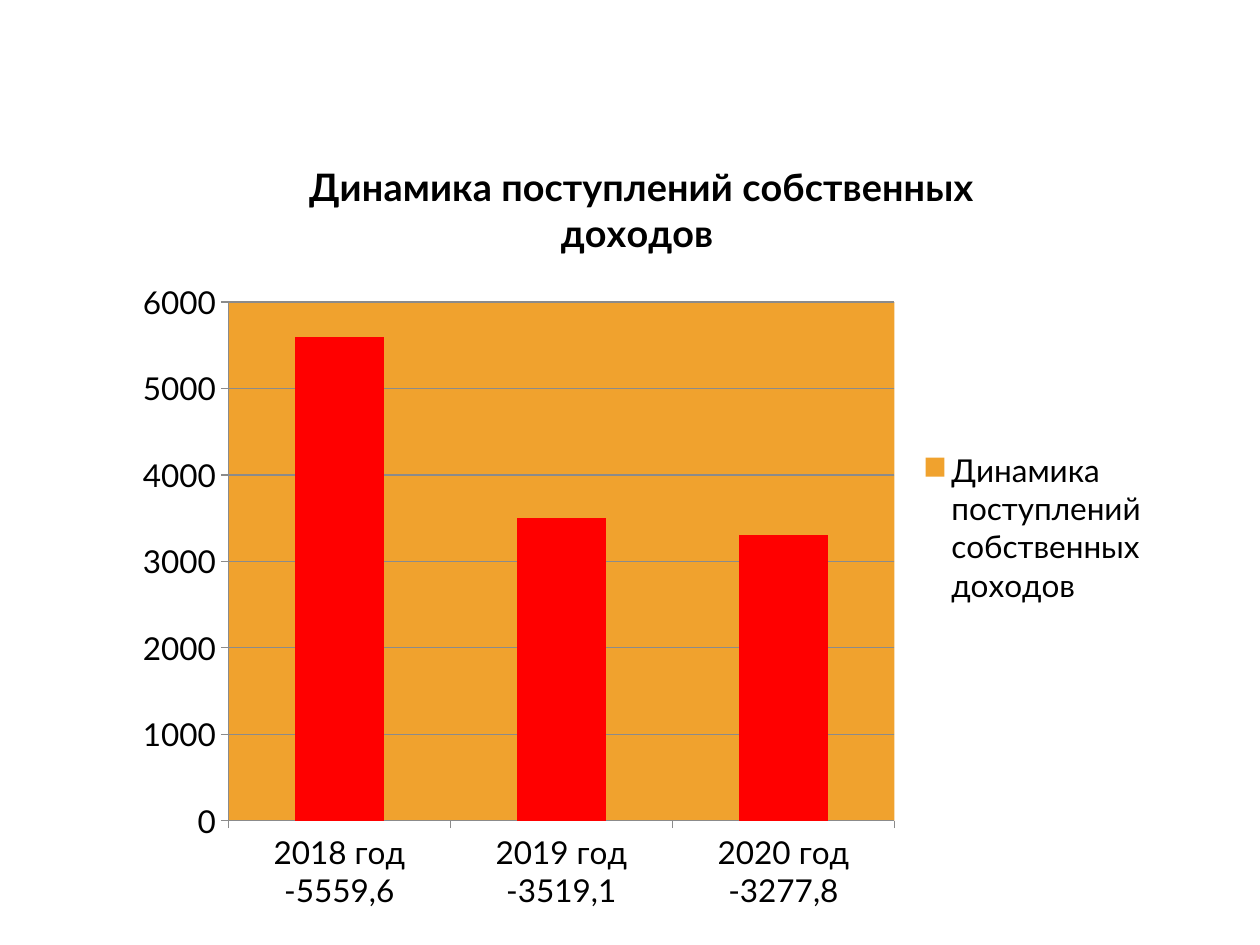
from pptx import Presentation
from pptx.chart.data import CategoryChartData as ChartData
from pptx.dml.color import RGBColor as Rgb
from pptx.enum.chart import XL_CHART_TYPE as Kind, XL_LEGEND_POSITION as Side
from pptx.enum.chart import XL_TICK_MARK as Tick
from pptx.oxml import parse_xml
from pptx.oxml.ns import nsdecls
from pptx.util import Cm, Pt

COLORS = {"text": "000000", "plot": "F0A22E", "bar": "FF0000", "line": "8B8B8B"}
FONT = "Lato"
TITLE = "Динамика поступлений собственных доходов "
INCOME = {
    "2018 год -5559,6": 5600,
    "2019 год -3519,1": 3500,
    "2020 год -3277,8": 3300,
}


def color(name):
    return Rgb.from_string(COLORS[name])


def set_font(font, size, bold=False):
    font.name, font.size, font.bold = FONT, Pt(size), bold
    font.color.rgb = color("text")


def set_fill(part, name):
    part.format.fill.solid()
    part.format.fill.fore_color.rgb = color(name)


def set_line(part):
    part.format.line.width = Pt(0.75)
    part.format.line.color.rgb = color("line")


def add_chart(slide):
    data = ChartData()
    data.categories = list(INCOME)
    data.add_series(TITLE, list(INCOME.values()))
    frame = slide.shapes.add_chart(
        Kind.COLUMN_STACKED, Cm(2.46), Cm(2.62), Cm(20.96), Cm(16.03), data)
    chart = frame.chart
    set_font(chart.font, 18)
    return chart


def style_title(chart):
    chart.has_title = True
    para = chart.chart_title.text_frame.paragraphs[0]
    run = para.add_run()
    run.text = TITLE
    set_font(run.font, 21.6, True)
    chart.chart_title.include_in_layout = False


def style_legend(chart):
    chart.has_legend = True
    chart.legend.position = Side.RIGHT
    chart.legend.include_in_layout = False


def style_axes(chart):
    value = chart.value_axis
    for axis in (chart.category_axis, value):
        axis.major_tick_mark = Tick.OUTSIDE
        axis.minor_tick_mark = Tick.NONE
        set_line(axis)
    value.minimum_scale, value.maximum_scale = 0, 6000
    value.major_unit = 1000
    value.has_major_gridlines = True
    set_line(value.major_gridlines)


def style_bars(chart):
    plot = chart.plots[0]
    plot.gap_width, plot.overlap = 150, 100
    plot.vary_by_categories = False
    series = plot.series[0]
    set_fill(series, "plot")
    for i in range(len(INCOME)):
        set_fill(series.points[i], "bar")


def fill_plot(chart):
    area = chart.element.xpath(".//c:plotArea")[0]
    area.append(parse_xml(
        f'<c:spPr {nsdecls("c", "a")}><a:solidFill>'
        f'<a:srgbClr val="{COLORS["plot"]}"/></a:solidFill></c:spPr>'))


def main():
    deck = Presentation()
    deck.slide_width, deck.slide_height = Cm(25.4), Cm(19.05)
    slide = deck.slides.add_slide(deck.slide_layouts[6])
    chart = add_chart(slide)
    for style in (style_title, style_legend, style_axes, style_bars, fill_plot):
        style(chart)
    deck.save("out.pptx")


if __name__ == "__main__":
    main()
